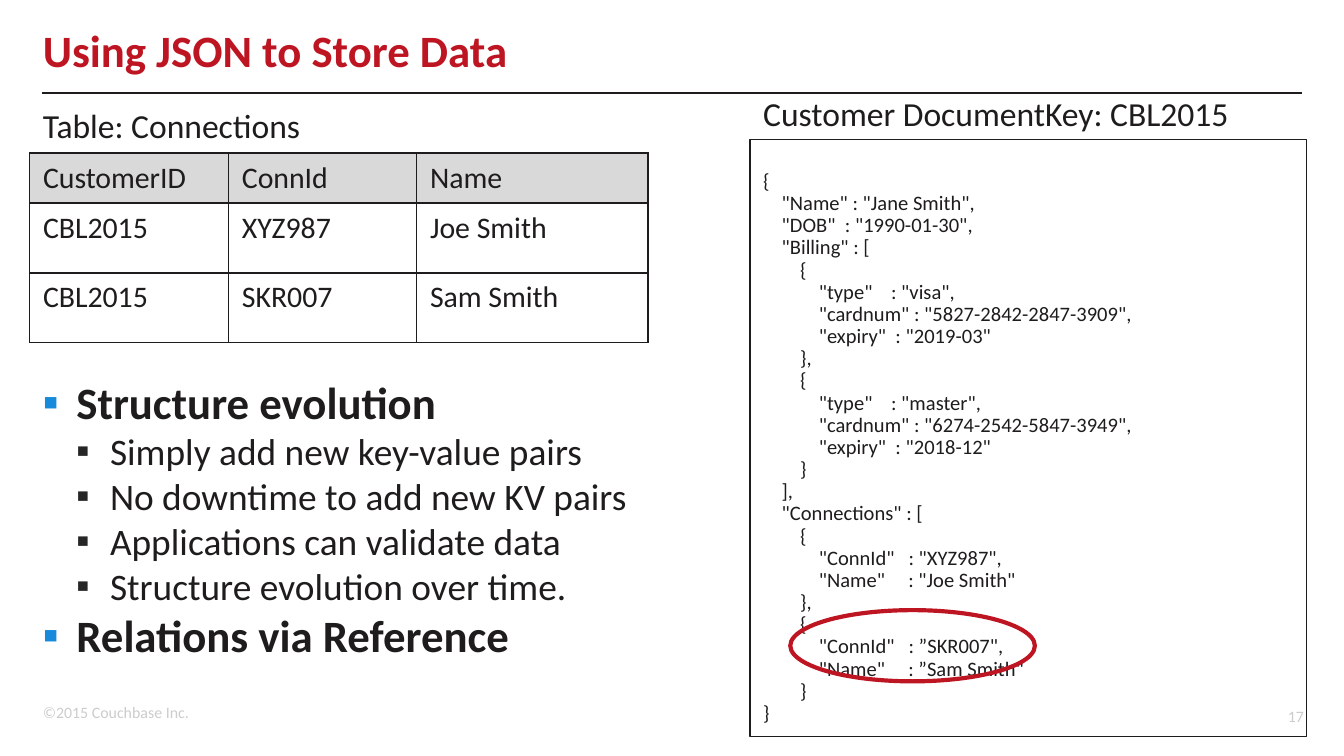
import pptx
import pptx.dml.color
import pptx.enum.shapes
import pptx.enum.text
import pptx.oxml
import pptx.oxml.ns
import pptx.util
from pptx.dml.color import RGBColor
from pptx.util import Inches, Pt

FONT = "Calibri"
INK = RGBColor(0x1E, 0x1C, 0x1C)
RED = RGBColor(0xBE, 0x15, 0x23)
BLUE = RGBColor(0x17, 0x8A, 0xDB)
CHARCOAL = RGBColor(0x26, 0x26, 0x26)
HEADER_GRAY = RGBColor(0xD9, 0xD9, 0xD9)
FOOTER_GRAY = RGBColor(0xCC, 0xCC, 0xCC)

MIDDLE = pptx.enum.text.MSO_ANCHOR.MIDDLE
LEFT = pptx.enum.text.PP_ALIGN.LEFT
RIGHT = pptx.enum.text.PP_ALIGN.RIGHT
SHAPES = pptx.enum.shapes.MSO_SHAPE

CONNECTIONS = [
    ["CustomerID", "ConnId", "Name"],
    ["CBL2015", "XYZ987", "Joe Smith"],
    ["CBL2015", "SKR007", "Sam Smith"],
]

BULLETS = [
    (0, "Structure evolution"),
    (1, "Simply add new key-value pairs"),
    (1, "No downtime to add new KV pairs"),
    (1, "Applications can validate data"),
    (1, "Structure evolution over time."),
    (0, "Relations via Reference"),
]

DOCUMENT = """{
    "Name" : "Jane Smith",
    "DOB"  : "1990-01-30",
    "Billing" : [
        {
            "type"    : "visa",
            "cardnum" : "5827-2842-2847-3909",
            "expiry"  : "2019-03"
        },
        {
            "type"    : "master",
            "cardnum" : "6274-2542-5847-3949",
            "expiry"  : "2018-12"
        }
    ],
    "Connections" : [
        {
            "ConnId"   : "XYZ987",
            "Name"     : "Joe Smith"
        },
        {
            "ConnId"   : ”SKR007",
            "Name"     : ”Sam Smith"
        }
}"""


def add_run(p, text, size, color=INK, bold=False):
    r = p.add_run()
    r.text = text
    r.font.name = FONT
    r.font.size = Pt(size)
    r.font.bold = bold
    r.font.color.rgb = color


def next_paragraph(tf, index):
    return tf.paragraphs[0] if index == 0 else tf.add_paragraph()


def add_text_box(slide, x, y, w, h, wrap=True):
    tf = slide.shapes.add_textbox(Inches(x), Inches(y), Inches(w), Inches(h)).text_frame
    tf.word_wrap = wrap
    return tf


def add_label(slide, x, y, w, h, text, size, color=INK, bold=False, wrap=True):
    tf = add_text_box(slide, x, y, w, h, wrap)
    add_run(tf.paragraphs[0], text, size, color, bold)
    return tf


def add_outline(slide, kind, x, y, w, h, color, width):
    sp = slide.shapes.add_shape(kind, Inches(x), Inches(y), Inches(w), Inches(h))
    sp.shadow.inherit = False
    sp.fill.background()
    sp.line.color.rgb = color
    sp.line.width = Pt(width)
    return sp


def add_element(parent, tag, **attributes):
    child = pptx.oxml.parse_xml(f"<a:{tag} {pptx.oxml.ns.nsdecls('a')}/>")
    for name, value in attributes.items():
        child.set(name, str(value))
    parent.append(child)
    return child


def add_bullet(p, level, color):
    pPr = p._p.get_or_add_pPr()
    pPr.set("marL", str(Inches(0.25 * (level + 1))))
    pPr.set("indent", str(Inches(-0.25)))
    add_element(add_element(pPr, "buClr"), "srgbClr", val=color)
    add_element(pPr, "buFont", typeface=FONT)
    add_element(pPr, "buChar", char="▪")


def add_cell_borders(cell):
    tcPr = cell._tc.get_or_add_tcPr()
    for i, side in enumerate(("lnL", "lnR", "lnT", "lnB")):
        ln = pptx.oxml.parse_xml(f"<a:{side} {pptx.oxml.ns.nsdecls('a')}/>")
        ln.set("w", str(Pt(1)))
        add_element(add_element(ln, "solidFill"), "srgbClr", val=INK)
        tcPr.insert(i, ln)


def add_frame(slide):
    """Footer, page number and the rule under the title."""
    add_label(slide, 0.22, 5.18, 1.29, 0.24, "©2015 Couchbase Inc.", 8.5, FOOTER_GRAY, wrap=False)
    tf = add_label(slide, 8.99, 5.18, 0.81, 0.3, "17", 8.5, FOOTER_GRAY)
    tf.vertical_anchor = MIDDLE
    tf.paragraphs[0].alignment = RIGHT
    rule = slide.shapes.add_connector(
        pptx.enum.shapes.MSO_CONNECTOR.STRAIGHT,
        Inches(0.31), Inches(0.69), Inches(9.69), Inches(0.69))
    rule.line.color.rgb = INK
    rule.line.width = Pt(1)
    add_element(rule._element.spPr, "effectLst")


def add_title(slide, x, y, w, h):
    tf = add_label(slide, x, y, w, h, "Using JSON to Store Data", 24, RED, bold=True)
    tf.vertical_anchor = MIDDLE
    tf.paragraphs[0].line_spacing = 0.8


def add_connections_table(slide, x, y):
    add_label(slide, x, y, 3.85, 0.4, "Table: Connections", 18)
    widths, heights = [1.48, 1.4, 1.72], [0.37, 0.52, 0.52]
    table = slide.shapes.add_table(
        len(heights), len(widths), Inches(x), Inches(y + 0.41),
        Inches(sum(widths)), Inches(sum(heights))).table
    for column, width in zip(table.columns, widths):
        column.width = Inches(width)
    for i, (row, height) in enumerate(zip(table.rows, heights)):
        row.height = Inches(height)
        for cell, text in zip(row.cells, CONNECTIONS[i]):
            if i == 0:
                cell.fill.solid()
                cell.fill.fore_color.rgb = HEADER_GRAY
            else:
                cell.fill.background()
            add_cell_borders(cell)
            add_run(cell.text_frame.paragraphs[0], text, 16)


def add_bullets(slide, x, y, w, h):
    tf = add_text_box(slide, x, y, w, h)
    for i, (level, text) in enumerate(BULLETS):
        p = next_paragraph(tf, i)
        p.level = level
        add_bullet(p, level, CHARCOAL if level else BLUE)
        add_run(p, text, 20 if level else 24, bold=level == 0)
    tf.paragraphs[0].line_spacing = 1.5


def add_document(slide, x, y, w, h):
    """Caption, code box and the ellipse around the last connection."""
    box = add_outline(slide, SHAPES.RECTANGLE, x, y + 0.4, w, h - 0.4, INK, 0.75)
    tf = box.text_frame
    tf.word_wrap = True
    tf.vertical_anchor = pptx.enum.text.MSO_ANCHOR.TOP
    tf.margin_top = Inches(0.23)
    for i, line in enumerate(DOCUMENT.split("\n")):
        p = next_paragraph(tf, i)
        p.alignment = LEFT
        p.line_spacing = 0.9
        add_run(p, line, 11)
    add_label(slide, x, y, 3.79, 0.4, "Customer DocumentKey: CBL2015", 18, wrap=False)
    add_outline(slide, SHAPES.OVAL, x + 0.3, y + 3.9, 1.82, 0.53, RED, 2.25)


prs = pptx.Presentation()
# A 16:9 page
prs.slide_width = Inches(10)
prs.slide_height = prs.slide_width * 9 // 16
slide = prs.slides.add_slide(prs.slide_layouts[6])
add_frame(slide)
add_title(slide, 0.22, 0.11, 8.75, 0.59)
add_connections_table(slide, 0.22, 0.73)
add_bullets(slide, 0.22, 2.54, 5.21, 1.71)
add_document(slide, 5.58, 0.64, 4.14, 4.84)
prs.save("out.pptx")
